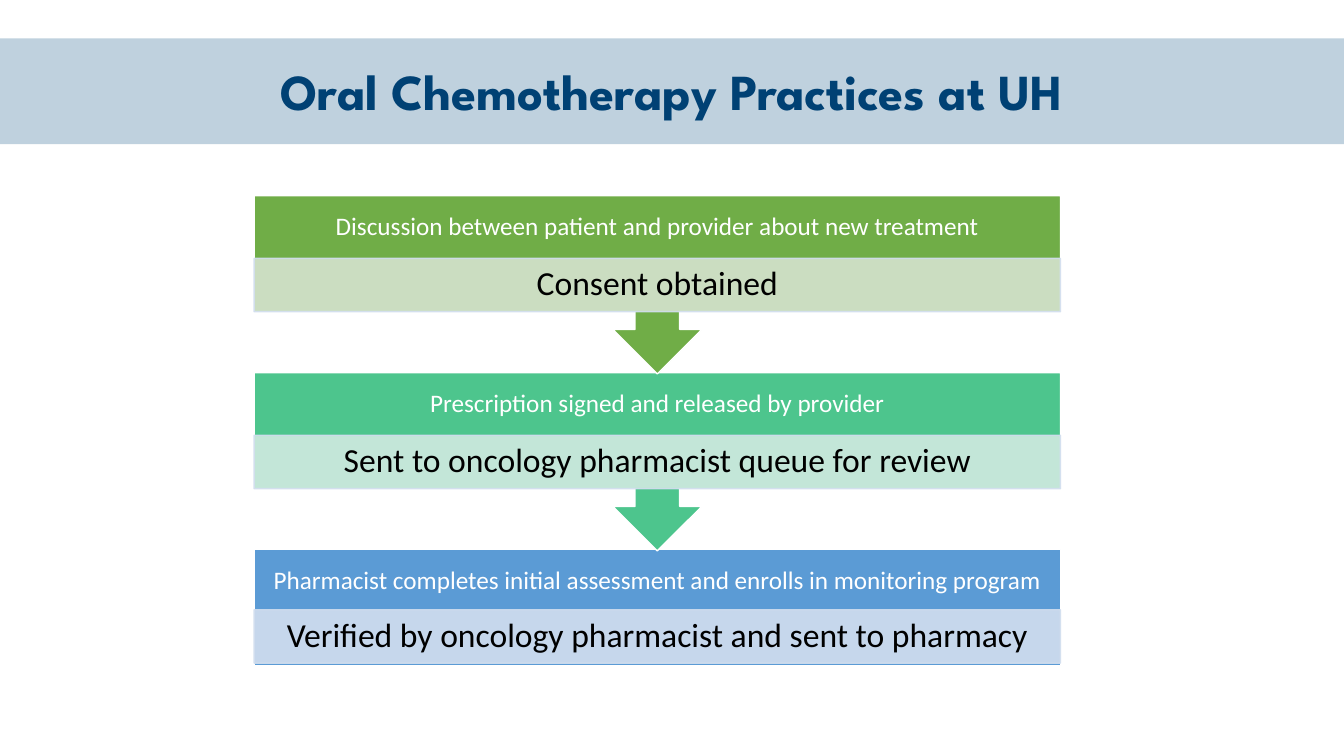
from pptx import Presentation
from pptx import util as u
from pptx.dml import color
from pptx.enum import shapes, text
from pptx.oxml import ns
from lxml import etree

HUES = {
    "band": "00497F", "title": "004174", "white": "FFFFFF", "black": "000000",
    "edge": "D2DEEF", "green": "70AD47", "pale green": "D5E3CF",
    "teal": "4DC58D", "pale teal": "D0EAE1", "blue": "5B9BD5", "pale blue": "D2DEEF",
}
LEFT, WIDE, TOP, STEP = 181.5, 576, 139.7, 126.4
RECT = shapes.MSO_SHAPE.RECTANGLE
CALL = shapes.MSO_SHAPE.UP_ARROW_CALLOUT


class Deck:
    def __init__(self, show):
        self.slide = show.slides.add_slide(show.slide_layouts[5])

    def paint(self, fill, hue, alpha=100):
        fill.solid()
        fill.fore_color.rgb = color.RGBColor.from_string(HUES[hue])
        if alpha < 100:
            tone = fill._xPr.find(".//" + ns.qn("a:srgbClr"))
            etree.SubElement(tone, ns.qn("a:alpha"), val=str(alpha * 1000))

    def letter(self, shape, words, size, hue, font="Calibri", bold=False, pad=(7.2, 3.6),
               anchor=text.MSO_ANCHOR.MIDDLE, space=0.9):
        frame = shape.text_frame
        frame.text = words
        frame.word_wrap = True
        frame.auto_size = text.MSO_AUTO_SIZE.NONE
        frame.vertical_anchor = anchor
        frame.margin_left = frame.margin_right = u.Pt(pad[0])
        frame.margin_top = frame.margin_bottom = u.Pt(pad[1])
        line = frame.paragraphs[0]
        line.alignment = text.PP_ALIGN.CENTER
        line.line_spacing = space
        face = line.runs[0].font
        face.name, face.size, face.bold = font, u.Pt(size), bold
        face.color.rgb = color.RGBColor.from_string(HUES[hue])

    def title(self, words, *box):
        head = self.slide.shapes.title
        head.left, head.top, head.width, head.height = map(u.Pt, box)
        self.letter(head, words, 36, "title", "League Spartan", True,
                    anchor=text.MSO_ANCHOR.TOP, space=1.0)

    def shape(self, kind, box, hue, alpha=100, edge=None):
        item = self.slide.shapes.add_shape(kind, *map(u.Pt, box))
        item.shadow.inherit = False
        self.paint(item.fill, hue, alpha)
        if edge:
            self.paint(item.line.fill, edge, alpha)
            item.line.width = u.Pt(1)
        else:
            item.line.fill.background()
        return item

    def band(self, *box):
        item = self.shape(RECT, box, "band", 25)
        self.slide.shapes._spTree.insert(2, item._element)

    def step(self, top, head, note, hue, last):
        if last:
            self.shape(RECT, (LEFT, top, WIDE, 82.8), hue, edge="white")
        else:
            call = self.shape(CALL, (LEFT, top, WIDE, 127.4), hue, edge="white")
            call.rotation = 180
        label = self.slide.shapes.add_textbox(*map(u.Pt, (LEFT, top, WIDE, 44.7)))
        self.letter(label, head, 18, "white", pad=(10, 10))
        drop = 43.1 if last else 44.9
        bar = self.shape(RECT, (LEFT, top + drop, WIDE, 38.1), "pale " + hue, 90, "edge")
        self.letter(bar, note, 24, "black", pad=(13.7, 2.2))


def main():
    show = Presentation()
    show.slide_width, show.slide_height = u.Pt(960), u.Pt(540)
    deck = Deck(show)
    deck.band(0, 27.4, 960, 75.6)
    deck.title("Oral Chemotherapy Practices at UH", 162, 39.6, 635.8, 51.1)
    steps = [
        ("Discussion between patient and provider about new treatment",
         "Consent obtained", "green"),
        ("Prescription signed and released by provider",
         "Sent to oncology pharmacist queue for review", "teal"),
        ("Pharmacist completes initial assessment and enrolls in monitoring program",
         "Verified by oncology pharmacist and sent to pharmacy", "blue"),
    ]
    final = len(steps) - 1
    for i, (head, note, hue) in reversed(list(enumerate(steps))):
        deck.step(TOP + i * STEP, head, note, hue, i == final)
    show.save("out.pptx")


if __name__ == "__main__":
    main()
